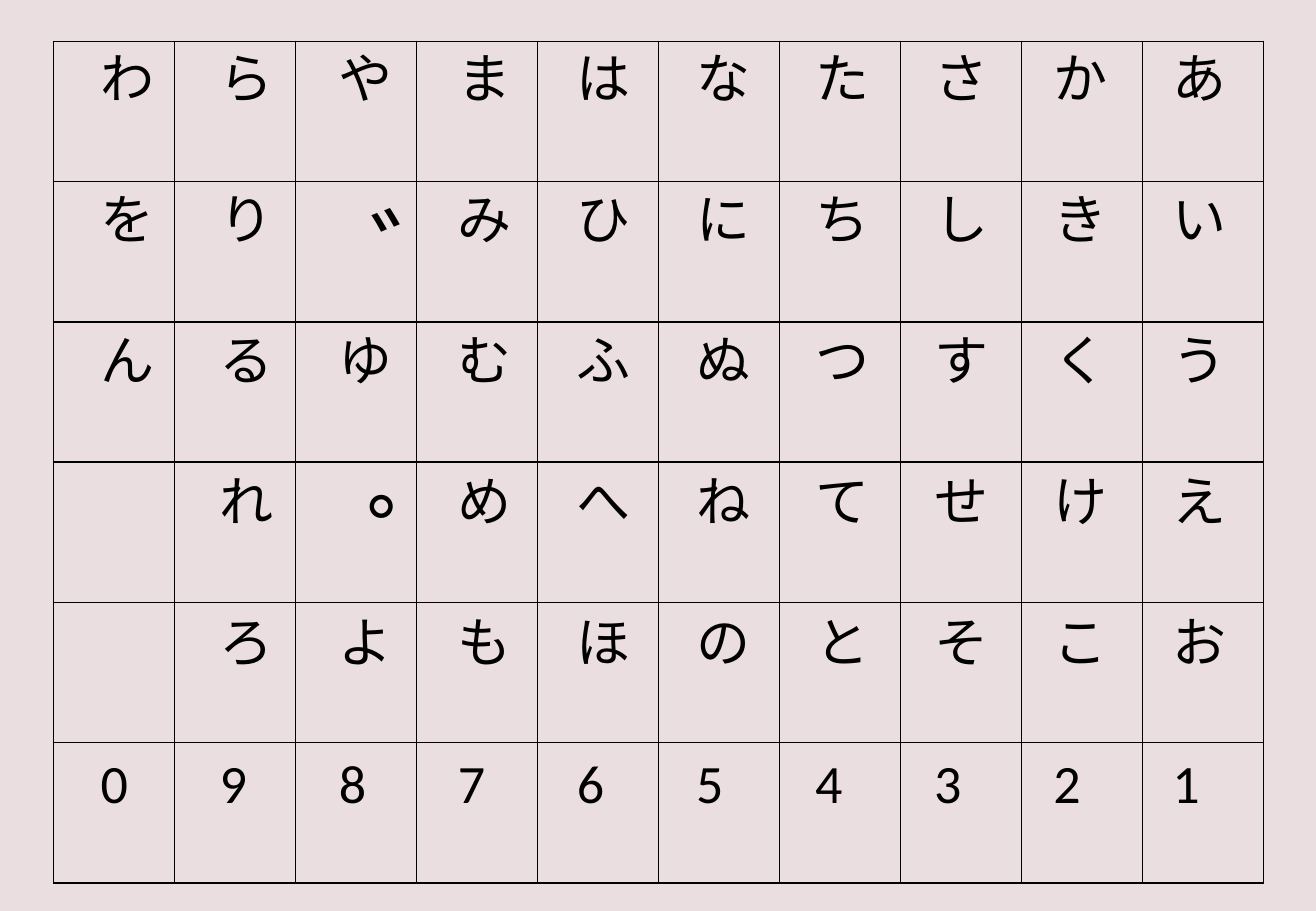
from lxml import etree
from pptx import Presentation
from pptx.dml.color import RGBColor
from pptx.enum.text import MSO_AUTO_SIZE
from pptx.oxml.ns import qn
from pptx.util import Inches, Pt

FIT_SHAPE = MSO_AUTO_SIZE.SHAPE_TO_FIT_TEXT

BACKGROUND, INK = "EADEE1", "000000"
FONT = "Calibri"

KANA_ROWS = [
    "わらやまはなたさかあ",
    "をり゛みひにちしきい",
    "んるゆむふぬつすくう",
    " れ゜めへねてせけえ",
    " ろよもほのとそこお",
    "0987654321",
]
ROWS, COLS = len(KANA_ROWS), len(KANA_ROWS[0])

GRID_LEFT, GRID_TOP, GRID_WIDTH, GRID_HEIGHT = 0.44, 0.34, 9.96, 6.93
LETTER_LEFT, LETTER_TOP = 0.73, 0.32
LETTER_STEP_X, LETTER_STEP_Y = 0.98, 1.16
LETTER_WIDTH, LETTER_HEIGHT, LETTER_SIZE = 0.67, 0.64, 32
MARK_HEIGHT, MARK_SIZE = 1.11, 60
# Sound marks sit lower and further right than the letters of their cell.
MARK_SHIFTS = {"゛": (0.26, 0.05), "゜": (0.24, 0.08)}


def rgb(color):
    return RGBColor.from_string(color)


def outline_cell(cell, color, width):
    tcPr = cell._tc.get_or_add_tcPr()
    for side in ("a:lnL", "a:lnR", "a:lnT", "a:lnB"):
        ln = etree.SubElement(tcPr, qn(side), w=str(Pt(width)))
        fill = etree.SubElement(ln, qn("a:solidFill"))
        etree.SubElement(fill, qn("a:srgbClr"), val=color)


def add_grid(slide):
    frame = slide.shapes.add_table(
        ROWS, COLS, Inches(GRID_LEFT), Inches(GRID_TOP),
        Inches(GRID_WIDTH), Inches(GRID_HEIGHT))
    table = frame.table
    table.first_row = False
    table.horz_banding = False
    for cell in table.iter_cells():
        outline_cell(cell, INK, 1)
        cell.fill.background()


def add_character(slide, char, row, col):
    """Place a letter, digit or sound mark by its row and column."""
    is_mark = char in MARK_SHIFTS
    dx, dy = MARK_SHIFTS.get(char, (0, 0))
    box = slide.shapes.add_textbox(
        Inches(LETTER_LEFT + col * LETTER_STEP_X + dx),
        Inches(LETTER_TOP + row * LETTER_STEP_Y + dy),
        Inches(LETTER_WIDTH),
        Inches(MARK_HEIGHT if is_mark else LETTER_HEIGHT))
    tf = box.text_frame
    tf.word_wrap = True
    tf.auto_size = FIT_SHAPE
    r = tf.paragraphs[0].add_run()
    r.text = char
    r.font.name = FONT
    r.font.size = Pt(MARK_SIZE if is_mark else LETTER_SIZE)
    r.font.color.rgb = rgb(INK)


def main():
    prs = Presentation()
    prs.slide_width, prs.slide_height = Inches(10.83), Inches(7.5)
    slide = prs.slides.add_slide(prs.slide_layouts[6])
    slide.background.fill.solid()
    slide.background.fill.fore_color.rgb = rgb(BACKGROUND)

    add_grid(slide)
    for row, kana in enumerate(KANA_ROWS):
        for col, char in enumerate(kana):
            if char != " ":
                add_character(slide, char, row, col)

    prs.save("out.pptx")


if __name__ == "__main__":
    main()
